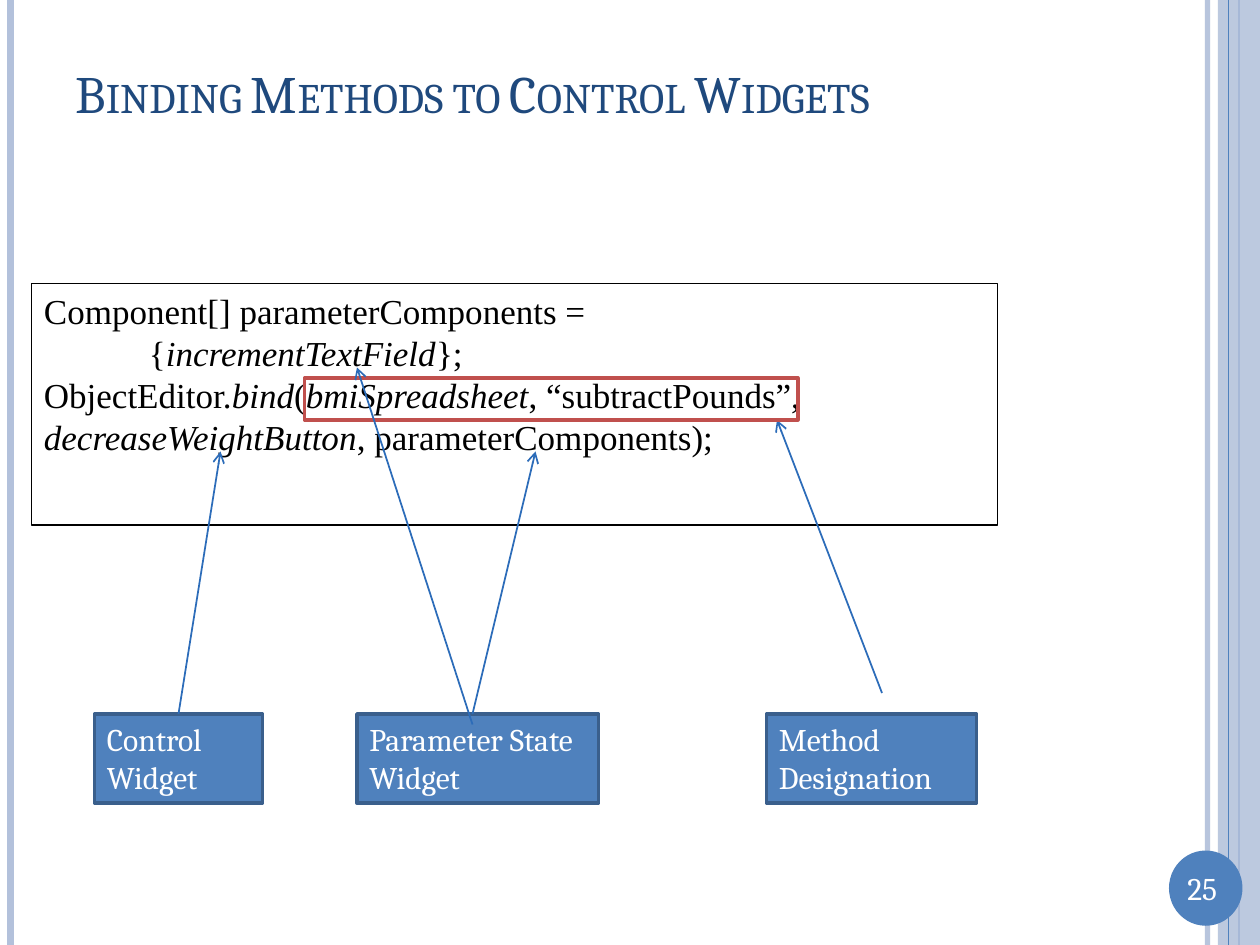
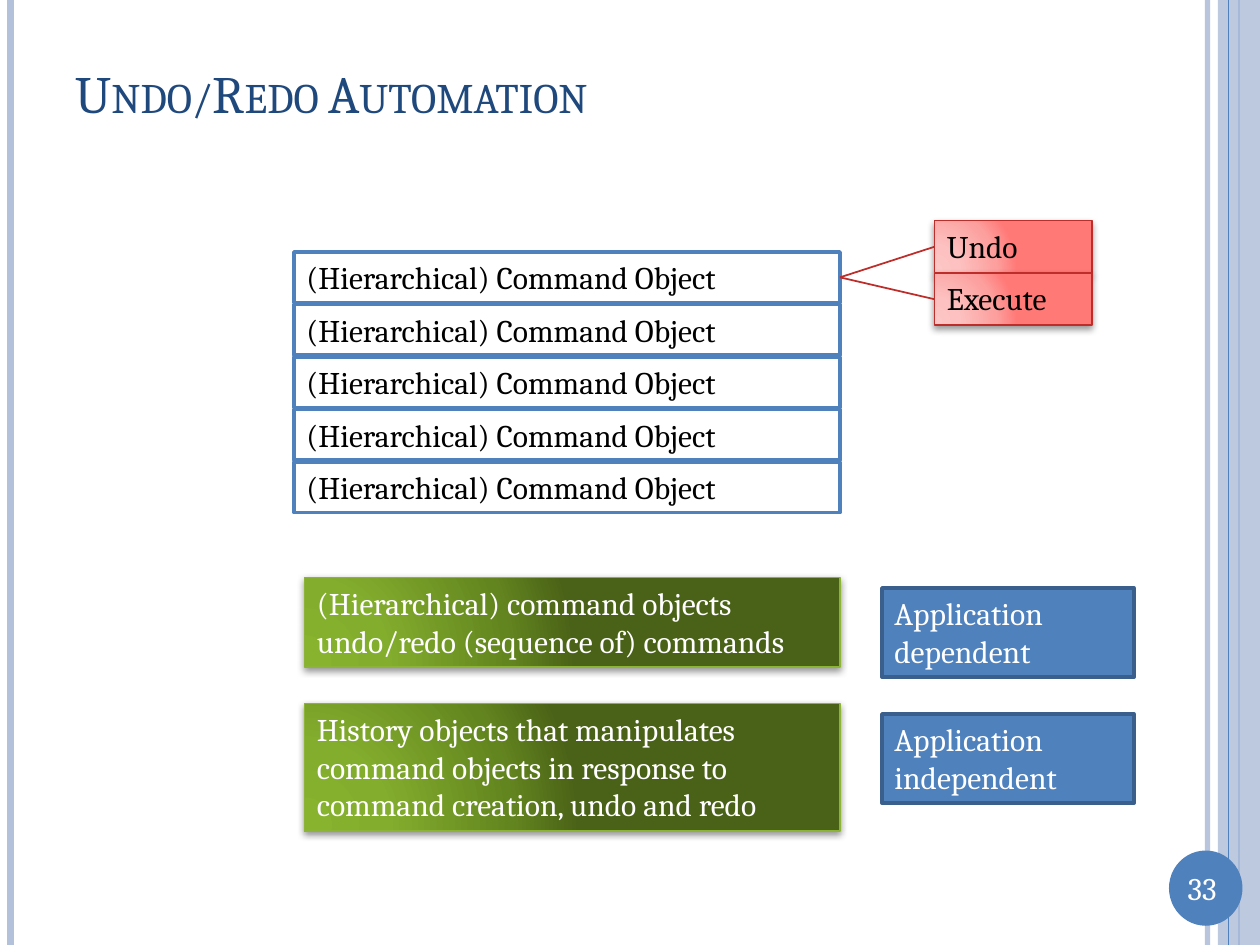
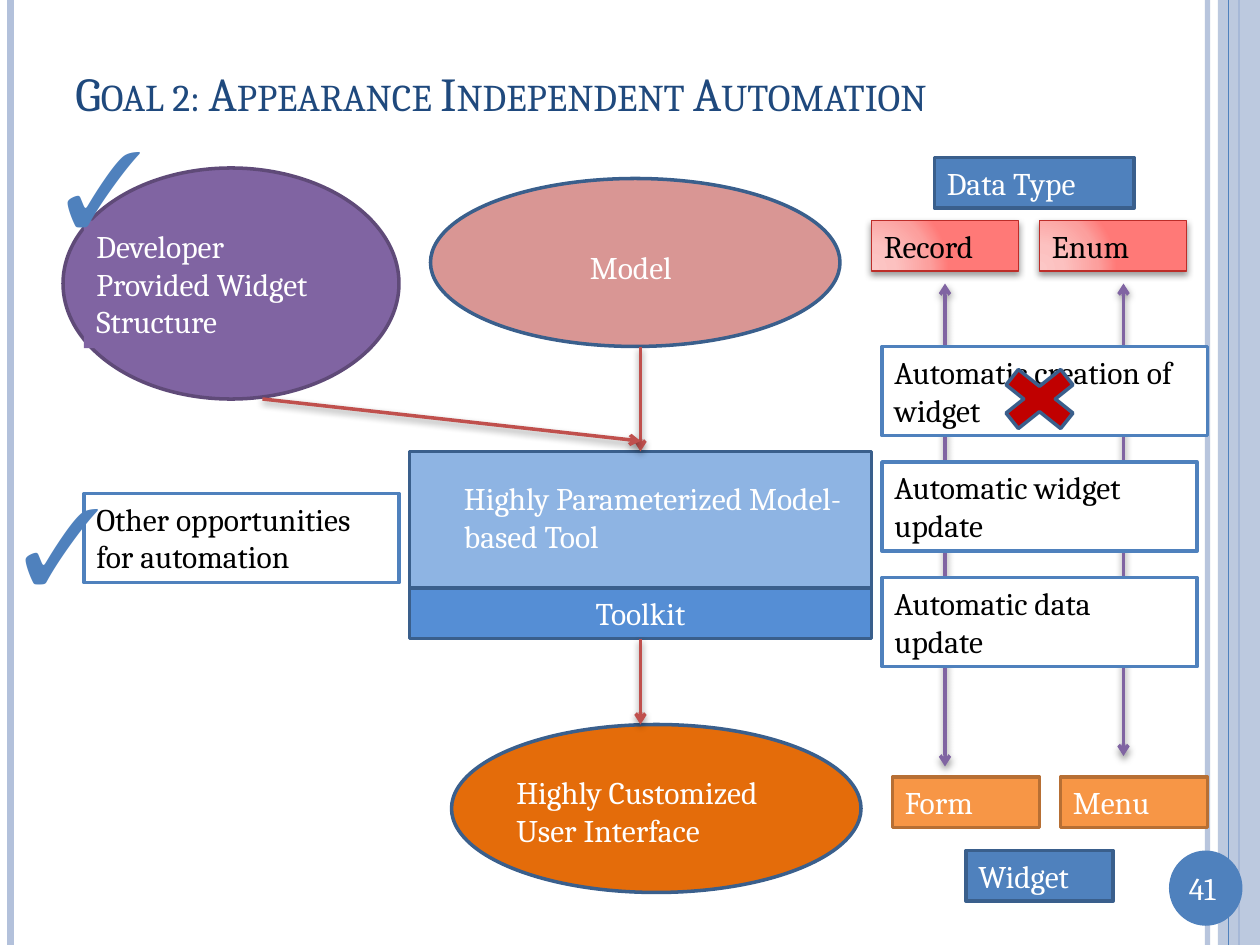
from dataclasses import dataclass
from typing import NamedTuple

from lxml.etree import SubElement
from pptx import Presentation
from pptx.dml.color import RGBColor
from pptx.enum.shapes import MSO_CONNECTOR as Wire, MSO_SHAPE as Kind
from pptx.enum.text import MSO_ANCHOR as Anchor, PP_ALIGN as Align
from pptx.oxml.ns import qn
from pptx.shapes.autoshape import Shape
from pptx.shapes.connector import Connector
from pptx.slide import Slide
from pptx.util import Pt

WIDE, HIGH = 720, 540
BLUE, NAVY, MIST, STEEL = "4F81BD", "1F497D", "B3C1DB", "3A5F8C"
WHITE, BLACK, RED, CRIMSON = "FFFFFF", "000000", "C0504D", "BD2D29"
PURPLE, ROSE, SKY, RUST = "8064A2", "D99694", "8EB4E3", "E46C0A"
TOP, LEFT, BOTTOM, RIGHT = range(4)


class Run(NamedTuple):
    text: str
    slant: bool = False


class Shade(NamedTuple):
    alpha: int
    drop: float


@dataclass(frozen=True)
class Pen:
    ink: str = WHITE
    size: float = 18
    face: str = "Cambria"
    align: Align = Align.LEFT
    small: bool = False


@dataclass(frozen=True)
class Look:
    fill: str | tuple[tuple[int, str], ...] | None = None
    edge: str | None = None
    weight: float = 2
    shade: Shade | None = None
    pen: Pen = Pen()


@dataclass(frozen=True)
class Box:
    left: float
    top: float
    wide: float
    high: float
    look: Look
    text: str = ""
    kind: Kind = Kind.RECTANGLE


@dataclass(frozen=True)
class Stroke:
    color: str
    weight: float
    head: bool = False
    tail: bool = False
    shade: Shade | None = None


class Joint(NamedTuple):
    shape: Shape
    side: int


Spot = tuple[float, float]

SOFT = Shade(40, 2)
DARK = Pen(BLACK)
MID = Pen(align=Align.CENTER)
LABEL = Look(BLUE, STEEL)
CARD = Look(WHITE, BLUE, pen=DARK)
AMBER = Look("F79646", "B76F34")
PINK = Look(((0, "FCC7C6"), (30, "FCC1C0"), (75, "FC9F9D"), (100, "FF7977")),
            CRIMSON, 1, SOFT, DARK)
GREEN = Look(((0, "88B32F"), (30, "83AD2D"), (75, "63851F"), (100, "4A6217")),
             "8CB537", 1, Shade(42, 1.6))
TICK = Look(pen=Pen(BLUE, 60, align=Align.CENTER))

POINT = Stroke("2C6CB9", 1, tail=True)
BRANCH = Stroke(CRIMSON, 1)
FLOW = Stroke(RED, 2, tail=True, shade=SOFT)
SPAN = Stroke(PURPLE, 2, head=True, tail=True, shade=SOFT)


def rgb(color: str) -> RGBColor:
    return RGBColor.from_string(color)


def rows(count: int) -> int:
    """Height of a box that holds this many lines of 18 point text."""
    return 7 + 22 * count


def fade(item: Shape | Connector, alpha: int) -> None:
    """Make the first colour of a shape or line partly clear."""
    tint = next(item._element.spPr.iter(qn("a:srgbClr")))
    SubElement(tint, qn("a:alpha"), val=str(alpha * 1000))


def cast(item: Shape | Connector, shade: Shade | None) -> None:
    """Replace the theme shadow with the given one, or with none."""
    props = item._element.spPr
    effect = props.find(qn("a:effectLst"))
    if effect is None:
        effect = SubElement(props, qn("a:effectLst"))
    if shade:
        outer = SubElement(effect, qn("a:outerShdw"), blurRad=str(Pt(4)),
                           dist=str(Pt(shade.drop)), dir="5400000", rotWithShape="0")
        tint = SubElement(outer, qn("a:srgbClr"), val=BLACK)
        SubElement(tint, qn("a:alpha"), val=str(shade.alpha * 1000))


def blend(shape: Shape, stops: tuple[tuple[int, str], ...]) -> None:
    """Fill with a round gradient that starts at the lower left."""
    shape.fill.gradient()
    grad = shape._element.spPr.find(qn("a:gradFill"))
    for child in list(grad):
        grad.remove(child)
    group = SubElement(grad, qn("a:gsLst"))
    for place, color in stops:
        stop = SubElement(group, qn("a:gs"), pos=str(place * 1000))
        SubElement(stop, qn("a:srgbClr"), val=color)
    ring = SubElement(grad, qn("a:path"), path="circle")
    SubElement(ring, qn("a:fillToRect"), l="5000", t="100000", r="120000", b="10000")


def write(shape: Shape, lines: list[list[Run]], pen: Pen,
          anchor: Anchor = Anchor.TOP) -> None:
    frame = shape.text_frame
    frame.word_wrap = True
    frame.vertical_anchor = anchor
    for i, line in enumerate(lines):
        para = frame.add_paragraph() if i else frame.paragraphs[0]
        para.alignment = pen.align
        for part in line:
            run = para.add_run()
            run.text = part.text
            font = run.font
            font.name, font.size, font.italic = pen.face, Pt(pen.size), part.slant
            font.color.rgb = rgb(pen.ink)
            if pen.small:
                run._r.get_or_add_rPr().set("cap", "small")


def draw(slide: Slide, box: Box) -> Shape:
    look = box.look
    area = [Pt(v) for v in (box.left, box.top, box.wide, box.high)]
    if look.fill or look.edge:
        shape = slide.shapes.add_shape(box.kind, *area)
        shape.shadow.inherit = False
        if look.fill is None:
            shape.fill.background()
        elif isinstance(look.fill, str):
            shape.fill.solid()
            shape.fill.fore_color.rgb = rgb(look.fill)
        else:
            blend(shape, look.fill)
        if look.edge:
            shape.line.color.rgb = rgb(look.edge)
            shape.line.width = Pt(look.weight)
        else:
            shape.line.fill.background()
        cast(shape, look.shade)
    else:
        shape = slide.shapes.add_textbox(*area)
    if box.text:
        write(shape, [[Run(box.text)]], look.pen)
    return shape


def link(slide: Slide, start: Spot | Joint, end: Spot | Joint,
         stroke: Stroke) -> Connector:
    """Draw a straight line; a joint ties its end to the side of a shape."""
    ends = [(0, 0) if isinstance(e, Joint) else e for e in (start, end)]
    wire = slide.shapes.add_connector(
        Wire.STRAIGHT, *(Pt(v) for spot in ends for v in spot))
    if isinstance(start, Joint):
        wire.begin_connect(*start)
    if isinstance(end, Joint):
        wire.end_connect(*end)
    wire.line.color.rgb = rgb(stroke.color)
    wire.line.width = Pt(stroke.weight)
    edge = wire.line._get_or_add_ln()
    for tag, shown in (("a:headEnd", stroke.head), ("a:tailEnd", stroke.tail)):
        if shown:
            SubElement(edge, qn(tag), type="arrow")
    cast(wire, stroke.shade)
    return wire


def rail(slide: Slide, x: float, color: str, weight: float) -> Connector:
    return link(slide, (x, 0), (x, HIGH), Stroke(color, weight))


def start(deck: Presentation, title: str, number: int, size: float = 30) -> Slide:
    """Add a slide with its side bands, page number and title."""
    slide = deck.slides.add_slide(deck.slide_layouts[6])
    fade(rail(slide, 690, MIST, 3), 93)
    rail(slide, 6, MIST, 4.5)
    rail(slide, 708, BLUE, 1.5)
    fade(draw(slide, Box(696, 0, 24, HIGH, Look(MIST))), 87)
    rail(slide, 702, BLUE, 0.75)
    draw(slide, Box(668, 486, 42, 43, Look(BLUE), kind=Kind.OVAL))
    draw(slide, Box(666, 493, 42, rows(1), Look(pen=MID), str(number)))
    head = draw(slide, Box(36, 22, 624, 62, Look()))
    write(head, [[Run(title)]], Pen(NAVY, size, small=True), Anchor.MIDDLE)
    return slide


def binding(deck: Presentation) -> None:
    slide = start(deck, "Binding Methods to Control Widgets", 25)
    code = draw(slide, Box(18, 162, 552, 138, Look(WHITE, BLACK, 0.75)))
    write(code, [
        [Run("Component[] parameterComponents =")],
        [Run("            {"), Run("incrementTextField", True), Run("};")],
        [Run("ObjectEditor."), Run("bind", True), Run("("),
         Run("bmiSpreadsheet", True), Run(", “subtractPounds”, "),
         Run("decreaseWeightButton", True), Run(", parameterComponents);")],
    ], Pen(BLACK, 20, "Times New Roman"))

    def label(left: float, wide: float, text: str) -> Shape:
        return draw(slide, Box(left, 408, wide, rows(2), LABEL, text))

    label(438, 120, "Method Designation")
    link(slide, (504, 396), (444, 240), POINT)
    control = label(54, 96, "Control Widget")
    link(slide, Joint(control, TOP), (126, 258), POINT)
    draw(slide, Box(174, 216, 282, 24, Look(edge=RED)))
    label(204, 138, "Parameter State Widget")
    link(slide, (270, 408), (306, 258), POINT)
    link(slide, (270, 414), (204, 210), POINT)


def undo(deck: Presentation) -> None:
    slide = start(deck, "Undo/Redo Automation", 33)
    stack = [draw(slide, Box(168, 144 + 30 * i, 312, rows(1), CARD,
                             "(Hierarchical) Command Object")) for i in range(5)]
    draw(slide, Box(174, 402, 306, rows(3), GREEN,
                    "History objects that manipulates command objects "
                    "in response to command creation, undo and redo"))
    draw(slide, Box(174, 330, 306, rows(2), GREEN,
                    "(Hierarchical) command objects undo/redo (sequence of) commands"))
    calls = [draw(slide, Box(534, 126 + 30 * i, 90, 30, PINK, text))
             for i, text in enumerate(("Undo", "Execute"))]
    for call in calls:
        link(slide, Joint(stack[0], RIGHT), Joint(call, LEFT), BRANCH)
    for top, text in ((408, "Application independent"), (336, "Application dependent")):
        draw(slide, Box(504, top, 144, rows(2), LABEL, text))


def goal(deck: Presentation) -> None:
    slide = start(deck, "Goal 2: Appearance Independent Automation", 41, 27)
    oval = Kind.OVAL
    draw(slide, Box(36, 96, 192, 132, Look(PURPLE, "5F4A78"), kind=oval))
    tool = draw(slide, Box(234, 258, 264, 78, Look(SKY, STEEL)))
    draw(slide, Box(246, 102, 234, 96, Look(ROSE, STEEL), kind=oval))
    draw(slide, Box(258, 414, 234, 96, Look(RUST, STEEL), kind=oval))
    draw(slide, Box(258, 270, 234, rows(2), Look(SKY),
                    "Highly Parameterized Model-based Tool"))
    kit = draw(slide, Box(234, 336, 264, rows(1), Look("558ED5", STEEL, pen=MID),
                          "Toolkit"))
    draw(slide, Box(288, 438, 180, rows(2), Look(RUST),
                    "Highly Customized User Interface"))
    link(slide, (366, 198), Joint(tool, TOP), FLOW)
    link(slide, Joint(kit, BOTTOM), (366, 414), FLOW)

    for left, top, wide, look, text in (
            (498, 126, 84, PINK, "Record"), (510, 444, 84, AMBER, "Form"),
            (594, 126, 84, PINK, "Enum"), (606, 444, 84, AMBER, "Menu"),
            (534, 90, 114, LABEL, "Data Type"), (552, 486, 84, LABEL, "Widget")):
        draw(slide, Box(left, top, wide, rows(1), look, text))
    link(slide, (540, 162), (540, 438), SPAN)
    link(slide, (642, 162), (642, 432), SPAN)
    for i, (wide, text) in enumerate((
            (186, "Automatic creation of widget"),
            (180, "Automatic widget update"),
            (180, "Automatic data update"))):
        draw(slide, Box(504, 198 + 66 * i, wide, rows(2), CARD, text))

    draw(slide, Box(330, 138, 78, 30, Look(ROSE), "Model"))
    draw(slide, Box(48, 126, 156, rows(3), Look(PURPLE),
                    "Developer Provided Widget Structure"))
    link(slide, (150, 228), (366, 252), FLOW)
    draw(slide, Box(564, 204, 60, 48, Look("C00000", STEEL), kind=Kind.MATH_MULTIPLY))
    draw(slide, Box(48, 282, 180, rows(2), CARD, "Other opportunities for automation"))
    for left, top in ((30, 66), (6, 270)):
        draw(slide, Box(left, top, 48, 80, TICK, "✓"))


def main() -> None:
    deck = Presentation()
    deck.slide_width, deck.slide_height = Pt(WIDE), Pt(HIGH)
    for build in (binding, undo, goal):
        build(deck)
    deck.save("out.pptx")


if __name__ == "__main__":
    main()
